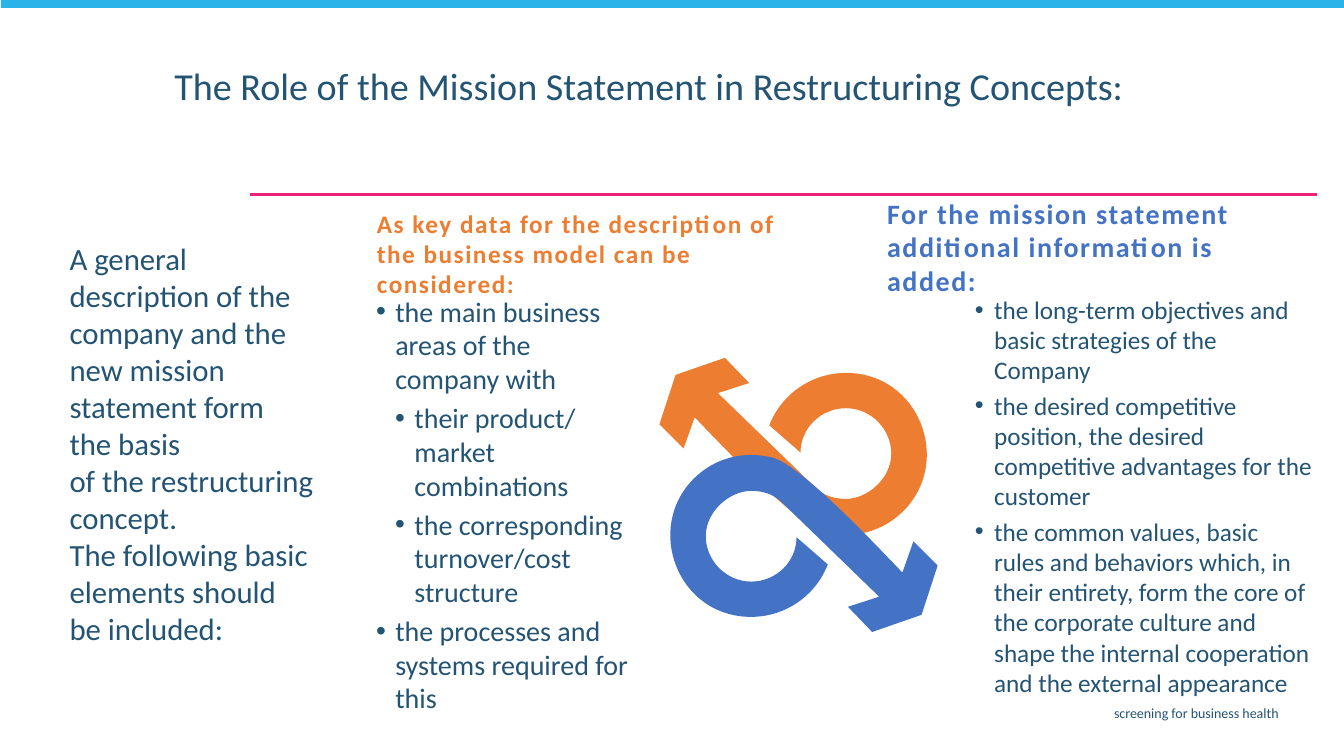
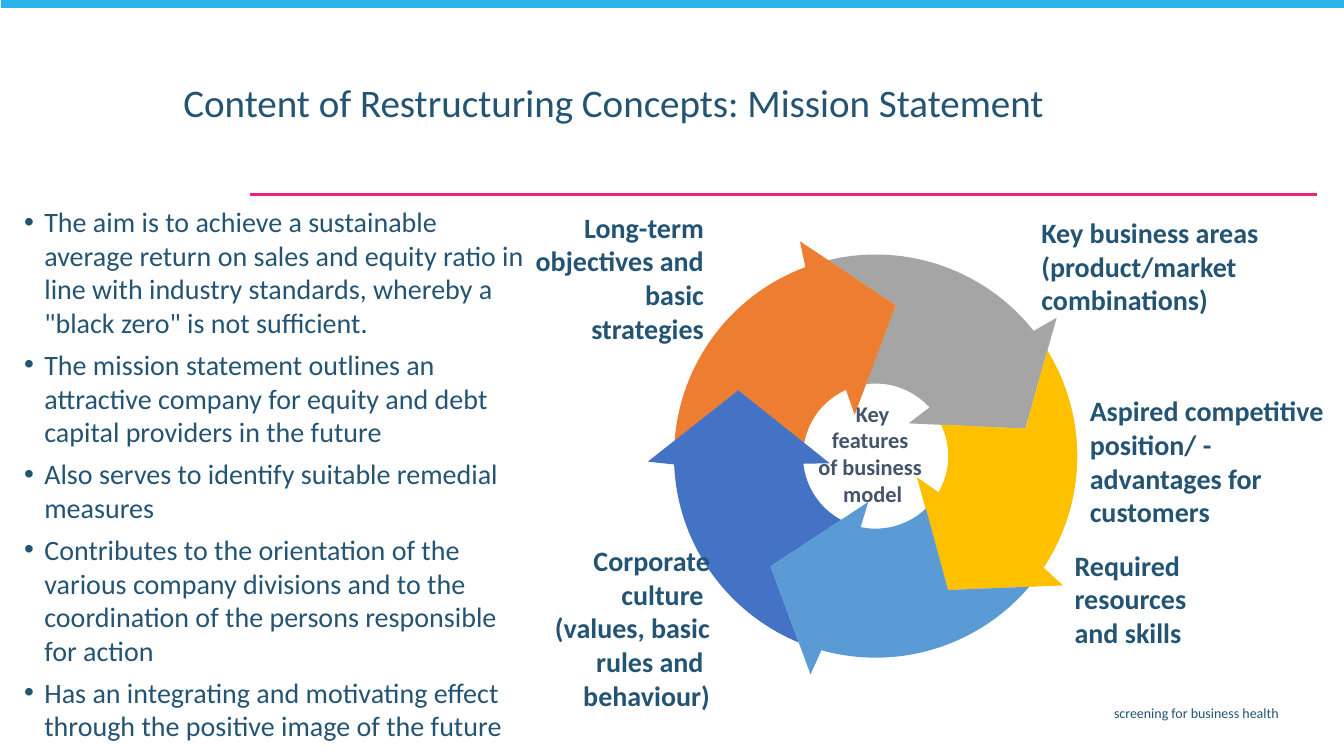
import math
from lxml import etree
from pptx import Presentation
from pptx import util as u
from pptx.dml.color import RGBColor
from pptx.enum import shapes, text
from pptx.oxml.ns import qn

PX = 9144
NAVY, PINK, SKY = "245473", "EC2179", "29B3E8"
ORANGE, BLUE, GRAY, YELLOW, LIGHT_BLUE, SLATE = "ED7D31", "4472C4", "A5A5A5", "FFC000", "5B9BD5", "44546A"
LEFT, CENTER, RIGHT = text.PP_ALIGN.LEFT, text.PP_ALIGN.CENTER, text.PP_ALIGN.RIGHT
TOP, MIDDLE, BOTTOM = text.MSO_ANCHOR.TOP, text.MSO_ANCHOR.MIDDLE, text.MSO_ANCHOR.BOTTOM


def rgb(value):
    return RGBColor.from_string(value)


def add_text(slide, box, paragraphs, size, color=NAVY, bold=False, align=LEFT, anchor=TOP,
             insets=(10, 5), indent=0, gap=0, line_spacing=None, tracking=None):
    shape = slide.shapes.add_textbox(*[value * PX for value in box])
    frame = shape.text_frame
    frame.word_wrap = True
    frame.vertical_anchor = anchor
    frame.margin_left = frame.margin_right = insets[0] * PX
    frame.margin_top = frame.margin_bottom = insets[1] * PX
    for number, (level, content) in enumerate(paragraphs):
        paragraph = frame.add_paragraph() if number else frame.paragraphs[0]
        if indent:
            properties = paragraph._p.get_or_add_pPr()
            properties.set("marL", str((level + 1) * indent * PX))
            properties.set("indent", str(-indent * PX))
            etree.SubElement(properties, qn("a:buFont")).set("typeface", "Arial")
            etree.SubElement(properties, qn("a:buChar")).set("char", "•")
        paragraph.level = level
        paragraph.alignment = align
        if line_spacing:
            paragraph.line_spacing = line_spacing
        if number:
            paragraph.space_before = u.Pt(gap)
        for line_number, line in enumerate(content.split("\n")):
            if line_number:
                paragraph.add_line_break()
            run = paragraph.add_run()
            run.text = line
            run.font.name = "Calibri"
            run.font.size = u.Pt(size)
            run.font.bold = bold
            run.font.color.rgb = rgb(color)
            if tracking:
                run._r.get_or_add_rPr().set("spc", str(tracking))


presentation = Presentation()
presentation.slide_width = 1333 * PX
presentation.slide_height = 750 * PX

titles = [
    ("The Role of the Mission Statement in Restructuring Concepts:", (163, 66, 968, 76), 27.2, 0.8),
    ("Content of Restructuring Concepts: Mission Statement", (172, 86, 968, 76), 27.9, 0.7),
]
slides = []
for title, box, size, line_spacing in titles:
    slide = presentation.slides.add_slide(presentation.slide_layouts[6])
    slides.append(slide)
    rule = slide.shapes.add_connector(shapes.MSO_CONNECTOR.STRAIGHT, 1306 * PX, 193 * PX, 248 * PX, 193 * PX)
    rule.line.color.rgb = rgb(PINK)
    rule.line.width = u.Pt(1.5)
    etree.SubElement(rule._element.spPr, qn("a:effectLst"))
    band = slide.shapes.add_shape(shapes.MSO_SHAPE.RECTANGLE, 1 * PX, -2 * PX, 1334 * PX, 10 * PX)
    band.shadow.inherit = False
    band.fill.solid()
    band.fill.fore_color.rgb = rgb(SKY)
    band.line.fill.background()
    add_text(slide, (365, 694, 913, 29), [(0, "screening for business health")], 10, align=RIGHT)
    add_text(slide, box, [(0, title)], size, line_spacing=line_spacing)

role_slide, content_slide = slides

add_text(role_slide, (60, 234, 276, 416), [(0, (
    "A general description of the company and the new mission statement form \nthe basis \n"
    "of the restructuring concept. \nThe following basic elements should \nbe included:"))],
    22, insets=(9, 4))
add_text(role_slide, (369, 290, 259, 428), [
    (0, "the main business areas of the company with"),
    (1, "their product/ market combinations"),
    (1, "the corresponding turnover/cost structure"),
    (0, "the processes and systems required for this"),
], 20, insets=(4, 2), indent=19, gap=4)
add_text(role_slide, (963, 290, 342, 410), [
    (0, "the long-term objectives and basic strategies of the Company"),
    (0, "the desired competitive position, the desired competitive advantages for the customer"),
    (0, "the common values, basic rules and behaviors which, in their entirety, form the core of "
        "the corporate culture and shape the internal cooperation and the external appearance"),
], 18, insets=(4, 2), indent=19, gap=3.6)

loop_outline = [
    [(896, 507)],
    [(875, 528), (846, 535), (818, 528)], [(790, 521), (716, 442), (689, 414)],
    [(678, 445)], [(654, 421)], [(670, 372)], [(719, 355)], [(743, 380)], [(712, 390)], [(810, 485)],
    [(817, 491), (826, 495), (839, 495)], [(860, 495), (884, 475), (884, 450)],
    [(884, 426), (864, 405), (839, 405)], [(814, 405), (794, 425), (794, 449)], [(763, 422)],
    [(775, 391), (805, 370), (839, 370)], [(912, 370), (945, 458), (896, 507)],
]
turned_outline = [[(1584 - x, 982 - y) for x, y in segment] for segment in loop_outline]
outlines = [(role_slide, ORANGE, loop_outline), (role_slide, BLUE, turned_outline)]

arcs = []
for radius, start, end in [(200, -93.2, -28), (72, -31.7, -87.4)]:
    half = (end - start) / 2
    handle = 4 / 3 * math.tan(math.radians(half) / 4)
    reach, turn = radius * math.hypot(1, handle), math.degrees(math.atan(handle))
    middle = start + half
    arcs.append([[(radius, start)]] + [
        [(reach, begin + turn), (reach, begin + half - turn), (radius, begin + half)]
        for begin in (start, middle)])
outer_arc, inner_arc = arcs
block_arrow = outer_arc + [[(226, -27)], [(151, 0)], [(46, -34.5)]] + inner_arc + [[(151, -72)]]

ring_x, ring_y = 868.5, 452.5
for number, color in enumerate([GRAY, ORANGE, YELLOW, BLUE, LIGHT_BLUE]):
    tip_angle = 349.6 + 72 * [0, 4, 1, 3, 2][number]
    outline = []
    for segment in block_arrow:
        angles = [(radius, math.radians(tip_angle + offset)) for radius, offset in segment]
        outline.append([(ring_x + radius * math.cos(angle), ring_y + radius * math.sin(angle))
                        for radius, angle in angles])
    outlines.append((content_slide, color, outline))

for slide, color, outline in outlines:
    corners = [(round(x * PX), round(y * PX)) for segment in outline for x, y in segment]
    builder = slide.shapes.build_freeform(*corners[0], scale=1.0)
    builder.add_line_segments(corners[1:], close=True)
    shape = builder.convert_to_shape()
    lines = iter(list(shape._element.iter(qn("a:lnTo"))))
    for segment in outline[1:]:
        nodes = [next(lines) for point in segment]
        if len(nodes) == 3:
            curve = etree.Element(qn("a:cubicBezTo"))
            nodes[0].addprevious(curve)
            for node in nodes:
                curve.append(node[0])
                node.getparent().remove(node)
    shape.shadow.inherit = False
    shape.fill.solid()
    shape.fill.fore_color.rgb = rgb(color)
    shape.line.fill.background()

headings = [
    ((870, 206, 425, 77), "For the mission statement\nadditional information is added:", 20, BLUE),
    ((364, 216, 464, 71), "As key data for the description of \nthe business model can be considered:", 18, ORANGE),
]
for box, heading, size, color in headings:
    add_text(role_slide, box, [(0, heading)], size, color, bold=True, anchor=MIDDLE, tracking=110)

add_text(content_slide, (15, 199, 514, 583), [
    (0, "The aim is to achieve a sustainable average return on sales and equity ratio in line with "
        "industry standards, whereby a \"black zero\" is not sufficient."),
    (0, "The mission statement outlines an attractive company for equity and debt capital providers in the future"),
    (0, "Also serves to identify suitable remedial measures"),
    (0, "Contributes to the orientation of the various company divisions and to the coordination of "
        "the persons responsible for action"),
    (0, "Has an integrating and motivating effect through the positive image of the future"),
], 20, insets=(9, 4), indent=20, gap=6)

labels = [
    ((1023, 208, 272, 111), "Key business areas \n(product/market combinations)", 20, NAVY, LEFT),
    ((1071, 384, 298, 145), "Aspired competitive position/ - \nadvantages for customers", 20, NAVY, LEFT),
    ((1056, 572, 234, 77), "Required resources\nand skills", 20, NAVY, LEFT),
    ((512, 236, 196, 111), "Long-term\n objectives and\n basic strategies", 20, NAVY, RIGHT),
    ((494, 566, 220, 145), "Corporate culture \n(values, basic rules and \nbehaviour)", 20, NAVY, RIGHT),
    ((799, 417, 133, 91), "Key features \nof business \nmodel", 16, SLATE, CENTER),
]
for box, label, size, color, align in labels:
    add_text(content_slide, box, [(0, label)], size, color, bold=True, align=align, anchor=BOTTOM)

presentation.save("out.pptx")
